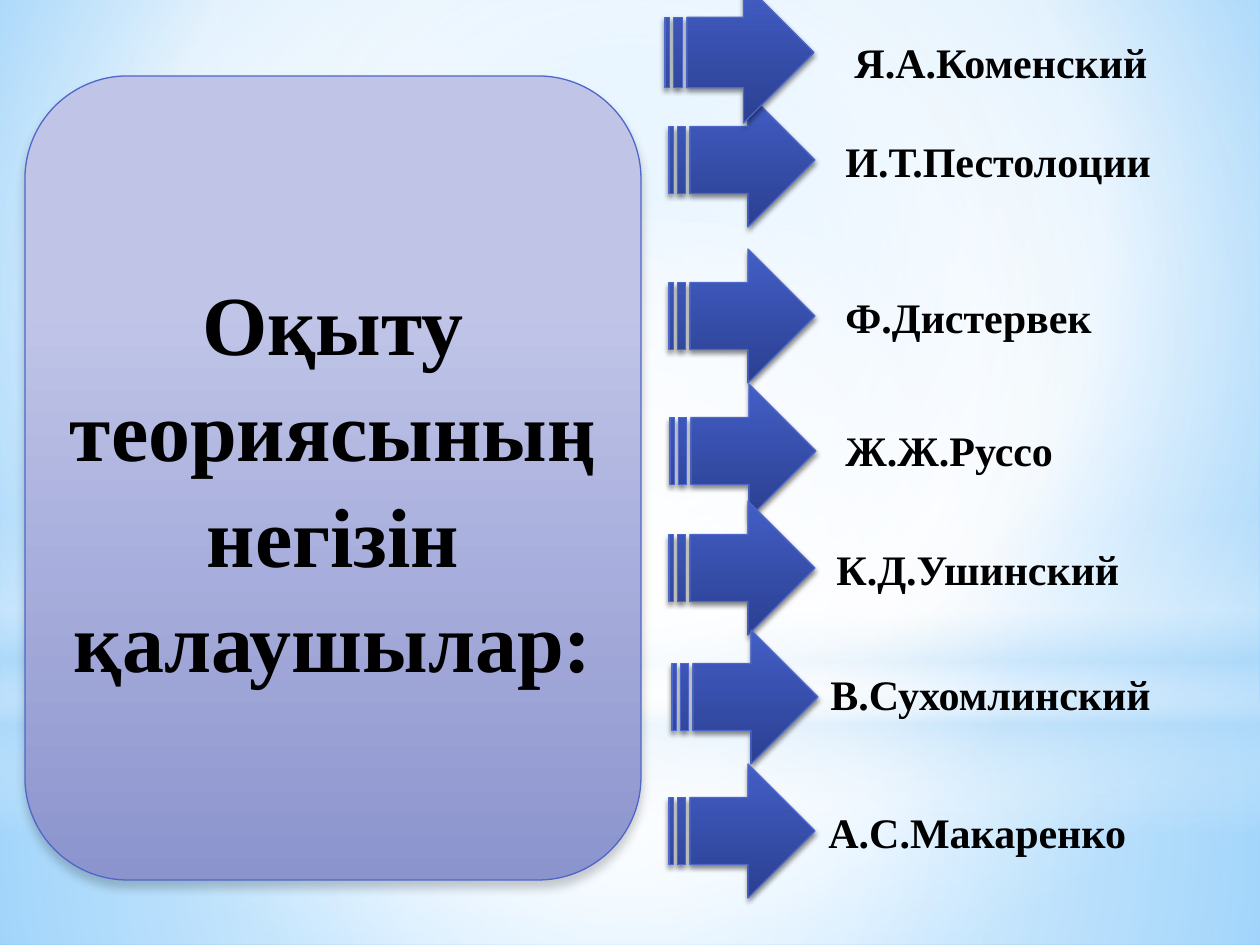
"""Build a slide naming the founders of teaching theory beside striped arrows."""
from dataclasses import dataclass
from typing import Optional

from lxml.etree import SubElement
from pptx import Presentation
from pptx.dml.color import RGBColor
from pptx.enum.shapes import MSO_SHAPE
from pptx.enum.text import MSO_ANCHOR, MSO_AUTO_SIZE, PP_ALIGN
from pptx.oxml.ns import qn
from pptx.util import Emu, Pt

EMU_PER_PX = 914400 / 126
SLIDE_WIDTH, SLIDE_HEIGHT = 1260, 945
ARROW_WIDTH, ARROW_HEIGHT = 146, 134
LABEL_HEIGHT = 63
FONT = "Times New Roman"
COLORS = {
    "text": "000000", "shadow": "000000", "outline": "4E67C8",
    "white": "FFFFFF", "mist": "B4DCFA", "sky": "9ED5FF", "deep_sky": "5BB9FF",
    "panel_top": "C0C5E8", "panel_bottom": "8C94CE",
    "arrow_top": "435EC5", "arrow_bottom": "2B4092",
}


@dataclass(frozen=True)
class Box:
    left: int
    top: int
    width: int
    height: int

    def emu(self) -> tuple:
        return tuple(px(value) for value in (self.left, self.top, self.width, self.height))


@dataclass(frozen=True)
class Stop:
    position: int
    color: str
    opacity: int = 100


@dataclass(frozen=True)
class Gradient:
    stops: tuple
    focus: Optional[tuple] = None


@dataclass(frozen=True)
class Shadow:
    opacity: int
    blur: float
    distance: float


@dataclass(frozen=True)
class Glow:
    kind: MSO_SHAPE
    box: Box
    gradient: Gradient


@dataclass(frozen=True)
class Label:
    text: str
    left: int
    top: int
    width: int


CENTER = (50, 50, 50, 50)
BACKGROUND = Gradient((Stop(0, "sky"), Stop(60, "white"), Stop(100, "deep_sky")), (20, 10, 20, 60))
GLOWS = (
    Glow(MSO_SHAPE.RECTANGLE, Box(0, 703, SLIDE_WIDTH, 242),
         Gradient((Stop(0, "white", 91), Stop(37, "white", 76), Stop(100, "mist", 79)), CENTER)),
    Glow(MSO_SHAPE.RECTANGLE, Box(0, 0, SLIDE_WIDTH, 703),
         Gradient((Stop(0, "white", 89), Stop(48, "white", 62), Stop(100, "mist", 79)), CENTER)),
    Glow(MSO_SHAPE.RECTANGLE, Box(0, 519, SLIDE_WIDTH, 315),
         Gradient((Stop(0, "white", 0), Stop(29, "white", 30), Stop(45, "mist", 40),
                   Stop(55, "white", 26), Stop(65, "mist", 60), Stop(100, "white", 0)))),
    Glow(MSO_SHAPE.OVAL, Box(0, 220, SLIDE_WIDTH, 703),
         Gradient((Stop(0, "white"), Stop(56, "white", 0)), CENTER)),
)
PANEL = Box(25, 76, 616, 804)
PANEL_GRADIENT = Gradient((Stop(28, "panel_top"), Stop(100, "panel_bottom")))
PANEL_SHADOW = Shadow(20, 5, 4)
ARROW_GRADIENT = Gradient((Stop(0, "arrow_top"), Stop(100, "arrow_bottom")))
ARROW_SHADOW = Shadow(45, 3.1, 1.8)
ARROWS = (
    Box(669, 93, ARROW_WIDTH, ARROW_HEIGHT),
    Box(665, -18, 149, 141),
    *(Box(left, top, ARROW_WIDTH, ARROW_HEIGHT)
      for left, top in ((669, 249), (670, 384), (669, 501), (672, 630), (669, 764))),
)
LABELS = (
    Label("Я.А.Коменский", 842, 30, 321),
    Label("И.Т.Пестолоции", 833, 129, 334),
    Label("Ф.Дистервек", 833, 285, 275),
    Label("Ж.Ж.Руссо", 833, 418, 236),
    Label("К.Д.Ушинский", 824, 537, 311),
    Label("В.Сухомлинский", 818, 662, 349),
    Label("А.С.Макаренко", 816, 800, 326),
)


def px(value: int) -> Emu:
    return Emu(round(value * EMU_PER_PX))


def add_color(parent, color: str, opacity: int) -> None:
    element = SubElement(parent, qn("a:srgbClr"), val=COLORS[color])
    if opacity < 100:
        SubElement(element, qn("a:alpha"), val=str(opacity * 1000))


def apply_gradient(fill, owner, gradient: Gradient) -> None:
    fill.gradient()
    element = next(owner.iter(qn("a:gradFill")))
    for child in list(element):
        element.remove(child)
    stop_list = SubElement(element, qn("a:gsLst"))
    for stop in gradient.stops:
        entry = SubElement(stop_list, qn("a:gs"), pos=str(stop.position * 1000))
        add_color(entry, stop.color, stop.opacity)
    if gradient.focus:
        shade = SubElement(element, qn("a:path"), path="circle")
        sides = {side: str(value * 1000) for side, value in zip("ltrb", gradient.focus)}
        SubElement(shade, qn("a:fillToRect"), **sides)
    else:
        SubElement(element, qn("a:lin"), ang="5400000", scaled="0")


def add_gradient_shape(slide, kind: MSO_SHAPE, box: Box, gradient: Gradient,
                       shadow: Optional[Shadow] = None):
    shape = slide.shapes.add_shape(kind, *box.emu())
    shape.shadow.inherit = False
    apply_gradient(shape.fill, shape.element.spPr, gradient)
    if shadow is None:
        shape.line.fill.background()
        return shape
    shape.line.color.rgb = RGBColor.from_string(COLORS["outline"])
    shape.line.width = Pt(0.75)
    effects = shape.element.spPr.find(qn("a:effectLst"))
    outer = SubElement(effects, qn("a:outerShdw"), blurRad=str(Pt(shadow.blur)),
                       dist=str(Pt(shadow.distance)), dir="5400000", rotWithShape="0")
    add_color(outer, "shadow", shadow.opacity)
    return shape


def add_run(paragraph, text: str, size: int) -> None:
    run = paragraph.add_run()
    run.text = text
    run.font.name = FONT
    run.font.size = Pt(size)
    run.font.bold = True
    run.font.color.rgb = RGBColor.from_string(COLORS["text"])


def place_title(slide, panel) -> None:
    title = slide.shapes.title
    title.left, title.top, title.width, title.height = PANEL.emu()
    panel.element.addnext(title.element)
    frame = title.text_frame
    frame.word_wrap = True
    frame.auto_size = MSO_AUTO_SIZE.NONE
    frame.vertical_anchor = MSO_ANCHOR.MIDDLE
    paragraph = frame.paragraphs[0]
    paragraph.alignment = PP_ALIGN.CENTER
    paragraph.line_spacing = 1.05
    add_run(paragraph, "Оқыту теориясының негізін қалаушылар:", 48)


def add_label(slide, label: Label) -> None:
    box = Box(label.left, label.top, label.width, LABEL_HEIGHT)
    frame = slide.shapes.add_textbox(*box.emu()).text_frame
    frame.word_wrap = False
    frame.auto_size = MSO_AUTO_SIZE.SHAPE_TO_FIT_TEXT
    add_run(frame.paragraphs[0], label.text, 24)


def main() -> None:
    presentation = Presentation()
    presentation.slide_width, presentation.slide_height = px(SLIDE_WIDTH), px(SLIDE_HEIGHT)
    slide = presentation.slides.add_slide(presentation.slide_layouts[5])
    apply_gradient(slide.background.fill, slide.element, BACKGROUND)
    for glow in GLOWS:
        add_gradient_shape(slide, glow.kind, glow.box, glow.gradient)
    panel = add_gradient_shape(slide, MSO_SHAPE.ROUNDED_RECTANGLE, PANEL, PANEL_GRADIENT, PANEL_SHADOW)
    place_title(slide, panel)
    for box in ARROWS:
        add_gradient_shape(slide, MSO_SHAPE.STRIPED_RIGHT_ARROW, box, ARROW_GRADIENT, ARROW_SHADOW)
    for label in LABELS:
        add_label(slide, label)
    presentation.save("out.pptx")


if __name__ == "__main__":
    main()
